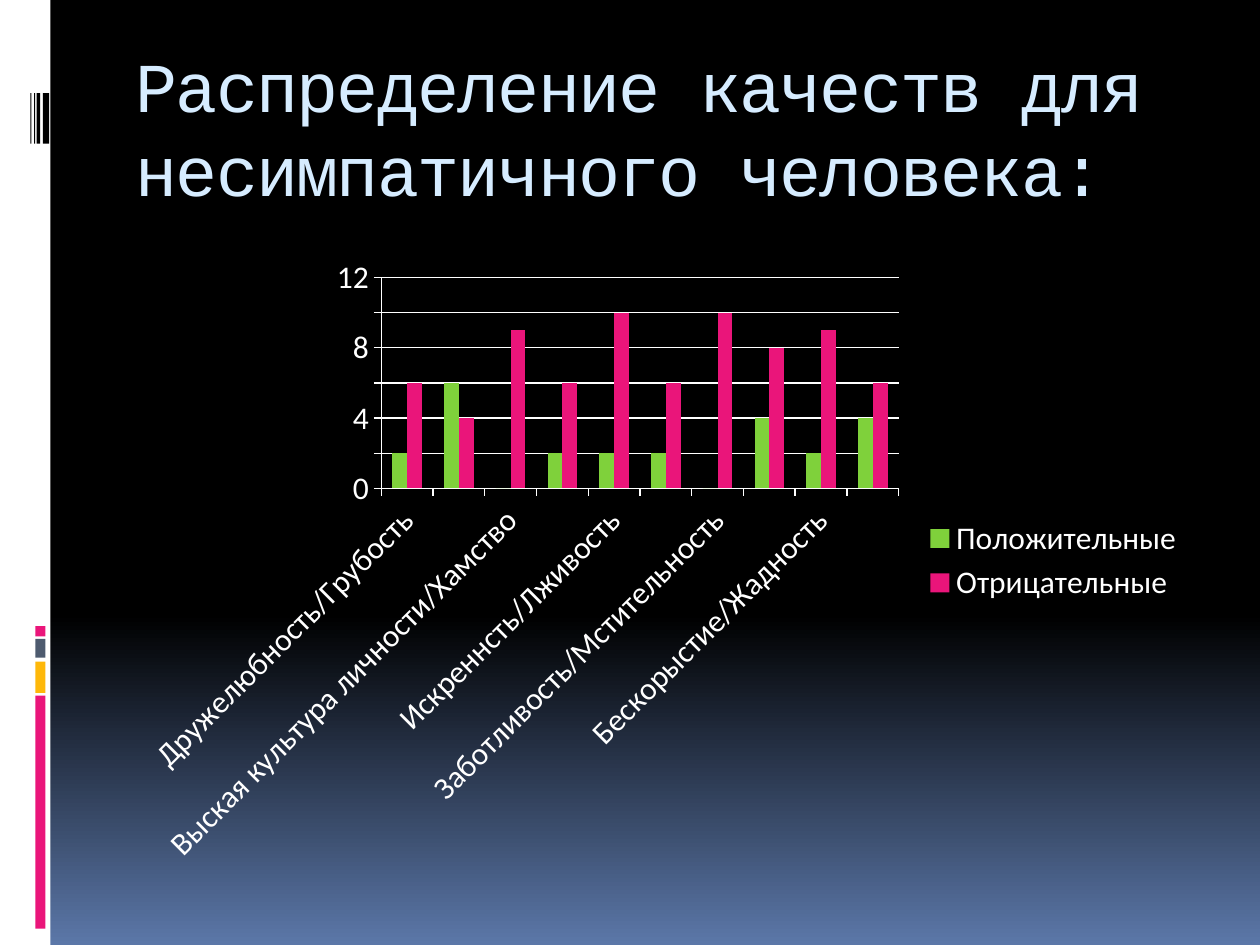
import pptx
import pptx.chart.data
import pptx.dml.color
import pptx.enum.chart
import pptx.enum.shapes
import pptx.util

SLIDE_SIZE = (10, 7.5)
TITLE = "Распределение качеств для несимпатичного человека:"
BACKGROUND_STOPS = [(0.65, "000000"), (1, "5B77A8")]
SIDEBAR_WIDTH = 0.4
COLOR_BLOCKS = [(4.97, 0.08, "EA157A"), (5.07, 0.15, "4E5B6F"),
                (5.25, 0.25, "FEB80A"), (5.52, 1.85, "EA157A")]
BARCODE_STRIPES = [(0.24, 0.01), (0.27, 0.01), (0.29, 0.03), (0.34, 0.05)]
QUALITIES = [
    ("Дружелюбность/Грубость", 2, 6),
    ("", 6, 4),
    ("Выская культура личности/Хамство", 0, 9),
    ("", 2, 6),
    ("Искреннсть/Лживость", 2, 10),
    ("", 2, 6),
    ("Заботливость/Мстительность", 0, 10),
    ("", 4, 8),
    ("Бескорыстие/Жадность", 2, 9),
    ("", 4, 6),
]
SERIES = [("Положительные", "7FD13B"), ("Отрицательные", "EA157A")]
LABEL_ROTATION = -45


def rgb(value):
    return pptx.dml.color.RGBColor.from_string(value)


def box(*lengths):
    return [pptx.util.Inches(length) for length in lengths]


def add_bar(slide, left, top, width, height, color):
    shape = slide.shapes.add_shape(
        pptx.enum.shapes.MSO_SHAPE.RECTANGLE, *box(left, top, width, height))
    shape.shadow.inherit = False
    shape.fill.solid()
    shape.fill.fore_color.rgb = rgb(color)
    shape.line.fill.background()


def paint_background(slide):
    fill = slide.background.fill
    fill.gradient()
    fill.gradient_angle = 270
    for stop, (position, color) in zip(fill.gradient_stops, BACKGROUND_STOPS):
        stop.position = position
        stop.color.rgb = rgb(color)


def add_title(slide):
    frame = slide.shapes.add_textbox(*box(0.98, 0.29, 8.5, 1)).text_frame
    frame.word_wrap = True
    frame.margin_top = pptx.util.Inches(0.05)
    frame.text = TITLE
    paragraph = frame.paragraphs[0]
    paragraph.line_spacing = pptx.util.Pt(48)
    run = paragraph.runs[0]
    run.font.size = pptx.util.Pt(40)
    run.font.name = "Courier New"
    run.font.color.rgb = rgb("D6ECFF")
    run.font._element.set("spc", "-100")


def style_font(font):
    font.size = pptx.util.Pt(18)
    font.name = "Calibri"
    font.color.rgb = rgb("FFFFFF")


def add_quality_chart(slide):
    categories, *columns = zip(*QUALITIES)
    data = pptx.chart.data.CategoryChartData()
    data.categories = categories
    for (name, color), values in zip(SERIES, columns):
        data.add_series(name, values)
    chart = slide.shapes.add_chart(
        pptx.enum.chart.XL_CHART_TYPE.COLUMN_CLUSTERED,
        *box(1, 1.95, 8.5, 5), data).chart
    chart.has_title = False
    style_font(chart.font)
    chart.has_legend = True
    chart.legend.position = pptx.enum.chart.XL_LEGEND_POSITION.RIGHT
    chart.legend.include_in_layout = False

    plot = chart.plots[0]
    plot.vary_by_categories = False
    plot.gap_width = 150
    plot.overlap = 0
    for series, (name, color) in zip(plot.series, SERIES):
        series.format.fill.solid()
        series.format.fill.fore_color.rgb = rgb(color)

    style_font(chart.category_axis.tick_labels.font)
    label_body = chart.category_axis._element.txPr.bodyPr
    label_body.set("rot", str(LABEL_ROTATION * 60000))
    label_body.set("vert", "horz")

    chart.value_axis.has_major_gridlines = True
    for part in (chart.category_axis, chart.value_axis,
                 chart.value_axis.major_gridlines):
        part.format.line.color.rgb = rgb("FFFFFF")
        part.format.line.width = pptx.util.Pt(0.75)


def main():
    presentation = pptx.Presentation()
    presentation.slide_width, presentation.slide_height = box(*SLIDE_SIZE)
    slide = presentation.slides.add_slide(presentation.slide_layouts[6])
    paint_background(slide)
    add_bar(slide, 0, 0, SIDEBAR_WIDTH, SLIDE_SIZE[1], "FFFFFF")
    for top, height, color in COLOR_BLOCKS:
        add_bar(slide, 0.28, top, 0.08, height, color)
    for left, width in BARCODE_STRIPES:
        add_bar(slide, left, 0.74, width, 0.4, "000000")
    add_title(slide)
    add_quality_chart(slide)
    presentation.save("out.pptx")


if __name__ == "__main__":
    main()
